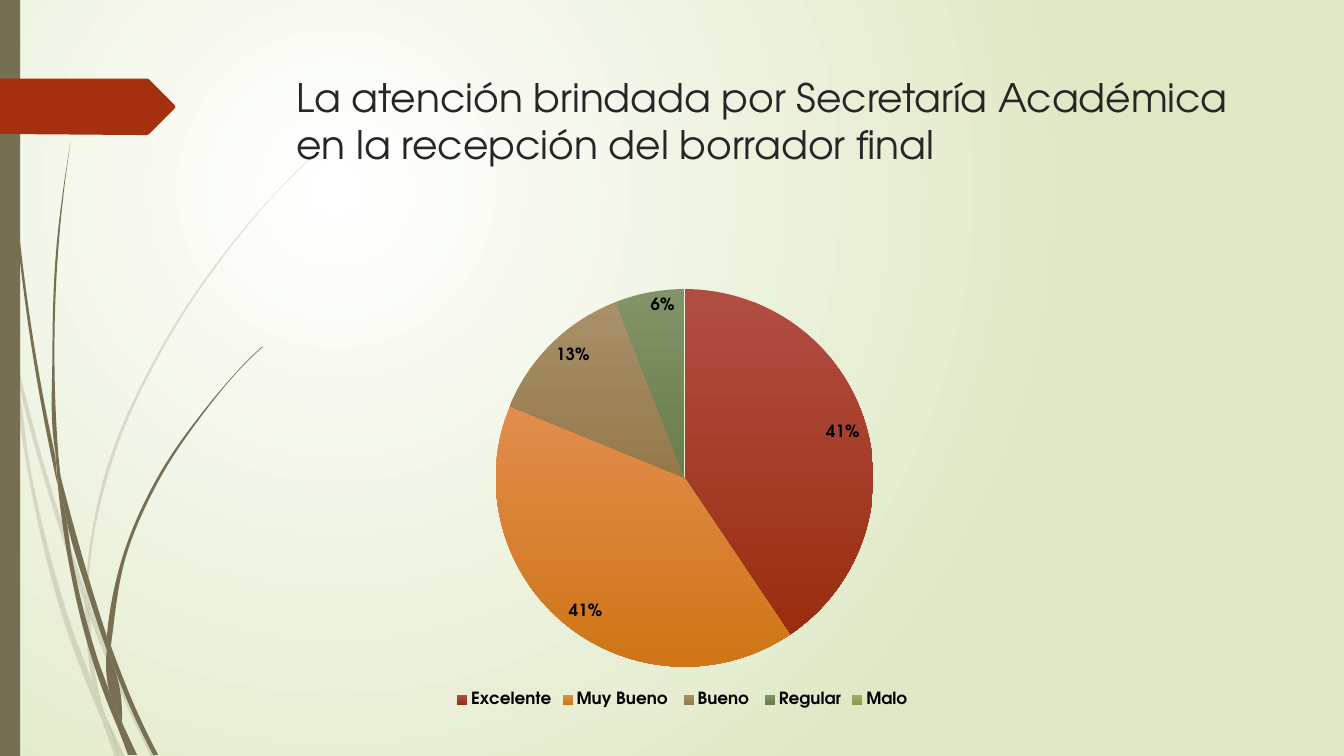
import math

import lxml.etree
import pptx
import pptx.chart.data
import pptx.dml.color
import pptx.enum.chart
import pptx.enum.shapes
import pptx.enum.text
import pptx.oxml.ns
import pptx.util

WIDTH, HEIGHT = pptx.util.Inches(13.33), pptx.util.Inches(7.5)
UNIT = pptx.util.Inches(0.01)
FONT = "TeX Gyre Adventor"
OLIVE, RUST, INK = "766F54", "A53010", "262626"

PALE_BLADES = [
    ([(0, 282), (9, 322), (11, 350)], [(10, 344), (0, 299)]),
    ([(14, 345), (62, 520), (85, 586)], [(84, 599), (58, 522), (17, 376)]),
    ([(88, 596), (92, 607), (127, 692), (155, 751)],
     [(150, 751), (123, 694), (88, 610)]),
    ([(105, 711), (124, 751)], [(119, 751), (105, 711)]),
    ([(11, 350), (28, 470), (65, 621), (92, 693), (101, 714)],
     [(99, 707), (93, 683), (70, 619), (31, 469), (17, 376), (11, 350)]),
    ([(84, 599), (87, 646), (93, 683), (96, 692), (105, 711)],
     [(103, 706), (91, 646), (88, 608), (84, 599)]),
    ([(312, 153), (289, 175), (268, 197), (228, 244), (158, 348), (107, 461), (85, 584)],
     [(88, 596), (88, 584), (110, 462), (160, 349), (229, 245), (268, 198), (290, 175), (312, 154)]),
    ([(101, 714), (114, 751)], [(119, 751), (101, 714)]),
    ([(85, 586), (88, 596), (88, 610)], [(84, 599), (85, 586)]),
    ([(93, 683), (96, 692), (105, 711), (119, 751)], [(101, 714), (93, 683)]),
]
DARK_BLADES = [
    ([(3, 0), (4, 48), (7, 110), (17, 233), (33, 355), (57, 481)],
     [(55, 453), (36, 355), (19, 232), (8, 109), (5, 48), (4, 0)]),
    ([(60, 472), (93, 590), (106, 631)], [(106, 645), (88, 592), (64, 505), (60, 472)]),
    ([(110, 641), (113, 649), (136, 706), (157, 749)],
     [(152, 749), (132, 708), (111, 656)]),
    ([(57, 477), (68, 557), (93, 659), (111, 708), (117, 722)],
     [(116, 717), (110, 691), (98, 657), (72, 556), (64, 505), (57, 477)]),
    ([(70, 141), (62, 193), (56, 245), (52, 349), (55, 449), (60, 472)],
     [(58, 453), (54, 349), (58, 245), (63, 193), (70, 141)]),
    ([(122, 719), (136, 749)], [(133, 749), (122, 719)]),
    ([(55, 449), (60, 472), (64, 505)], [(57, 477), (55, 449)]),
    ([(260, 344), (245, 358), (231, 373), (204, 405), (156, 474), (122, 551), (106, 631)],
     [(110, 641), (111, 633), (125, 552), (158, 476), (205, 406), (231, 374), (245, 359), (261, 344)]),
    ([(117, 722), (127, 749)], [(131, 749), (117, 722)]),
    ([(106, 645), (110, 691), (116, 706), (122, 719)],
     [(121, 716), (111, 656), (106, 645)]),
    ([(106, 631), (110, 641), (111, 656)], [(106, 645), (106, 631)]),
    ([(110, 691), (116, 706), (122, 719), (133, 749)], [(130, 749), (117, 722), (110, 691)]),
]
RIBBON = [(0, 78), (146, 78), (148, 79), (173, 104), (174, 106),
          (173, 108), (148, 133), (146, 134), (136, 134), (0, 133)]
TITLE = "La atención brindada por Secretaría Académica en la recepción del borrador final"
RATINGS = [
    ("Excelente", 41, ("B14E43", "9A2D0F")),
    ("Muy Bueno ", 41, ("E18D4C", "CF7516")),
    ("Bueno ", 13, ("A89068", "947A4B")),
    ("Regular", 6, ("819367", "6A7D4D")),
    ("Malo ", 0, ("9DB265", "889E47")),
]


def color(code):
    """Turn a hex string into a colour."""
    return pptx.dml.color.RGBColor.from_string(code)


def apply(target, values):
    """Set attributes from a dict of format values."""
    for name, value in values.items():
        setattr(target, name, value)


def add_element(parent, tag, **values):
    """Append an XML element with its attributes."""
    texts = {name: str(value) for name, value in values.items()}
    return lxml.etree.SubElement(parent, pptx.oxml.ns.qn(tag), texts)


def style_font(font, size, code, bold=False):
    """Give a font its face, size, weight and colour."""
    apply(font, {"name": FONT, "size": pptx.util.Pt(size), "bold": bold})
    font.color.rgb = color(code)


def fill_gradient(fill, codes):
    """Fill with a two-stop gradient."""
    fill.gradient()
    for stop, code in zip(fill.gradient_stops, codes):
        stop.color.rgb = color(code)


def finish(shape, code):
    """Give a shape a plain fill without line or shadow."""
    shape.shadow.inherit = False
    shape.fill.solid()
    shape.fill.fore_color.rgb = color(code)
    shape.line.fill.background()


def paint_background(slide):
    """Paint the radial glow behind the slide."""
    fill_gradient(slide.background.fill, ("FFFFFF", "DFE8C4"))
    gradient = slide.element.xpath(".//a:gradFill")[0]
    gradient.remove(gradient.xpath("./a:lin")[0])
    glow = add_element(gradient, "a:path", path="circle")
    add_element(glow, "a:fillToRect", l=50000, t=50000, r=100000, b=100000)


def bend(edge):
    """Return the two Bézier handles of every segment of an edge."""
    pairs = list(zip(edge, edge[1:]))
    if not pairs:
        return []
    spans = [math.dist(*pair) for pair in pairs]
    units = [[(b - a) / span for a, b in zip(*pair)] for pair, span in zip(pairs, spans)]
    slopes = [[(u * after + v * before) / (before + after) for u, v in zip(one, two)]
              for one, two, before, after in zip(units, units[1:], spans, spans[1:])]
    first = [2 * u - s for u, s in zip(units[0], (slopes or units)[0])]
    last = [2 * u - s for u, s in zip(units[-1], (slopes or units)[-1])]
    slopes = [first, *slopes, last]
    return [([p + s * span / 3 for p, s in zip(start, leave)],
             [p - s * span / 3 for p, s in zip(end, arrive)])
            for (start, end), span, leave, arrive in zip(pairs, spans, slopes, slopes[1:])]


def add_outline(slide, points, code):
    """Draw a filled outline given in grid units."""
    corners = [(x * UNIT, y * UNIT) for x, y in points]
    builder = slide.shapes.build_freeform(*corners[0])
    builder.add_line_segments(corners[1:], close=True)
    shape = builder.convert_to_shape()
    finish(shape, code)
    return shape


def add_blade(slide, down, back, opacity):
    """Draw a grass blade between two curved edges."""
    joined = down[-1] == back[0]
    shape = add_outline(slide, down + back[joined:], OLIVE)
    handles = bend(down) + [None] * (not joined) + bend(back)
    for line, pair in zip(shape.element.xpath(".//a:lnTo"), handles):
        if pair:
            curve = lxml.etree.Element(pptx.oxml.ns.qn("a:cubicBezTo"))
            for x, y in pair:
                add_element(curve, "a:pt", x=round(x * UNIT - shape.left),
                            y=round(y * UNIT - shape.top))
            curve.append(line[0])
            line.getparent().replace(line, curve)
    if opacity < 100:
        tint = shape.element.xpath("./p:spPr/a:solidFill/a:srgbClr")[0]
        add_element(tint, "a:alpha", val=opacity * 1000)


def add_title(slide):
    """Write the heading."""
    box = slide.shapes.add_textbox(284 * UNIT, 68 * UNIT, 975 * UNIT, 140 * UNIT)
    apply(box.text_frame, {"word_wrap": True,
                           "vertical_anchor": pptx.enum.text.MSO_ANCHOR.TOP})
    span = box.text_frame.paragraphs[0].add_run()
    span.text = TITLE
    style_font(span.font, 28, INK)


def add_pie(slide):
    """Chart the share of each rating."""
    data = pptx.chart.data.CategoryChartData()
    data.categories = [name for name, _, _ in RATINGS]
    data.add_series("Series 1", [value for _, value, _ in RATINGS])
    chart = slide.shapes.add_chart(pptx.enum.chart.XL_CHART_TYPE.PIE, 305 * UNIT, 273 * UNIT,
                                   748 * UNIT, 433 * UNIT, data).chart
    apply(chart, {"has_title": False, "has_legend": True})
    style_font(chart.font, 10, "000000", True)
    apply(chart.legend, {"position": pptx.enum.chart.XL_LEGEND_POSITION.BOTTOM,
                         "include_in_layout": False})
    style_font(chart.legend.font, 12, "000000", True)
    chart.plots[0].vary_by_categories = True
    series = chart.plots[0].series[0]
    labels = series.data_labels
    apply(labels, {"show_percentage": True, "show_value": False,
                   "number_format": "0%", "number_format_is_linked": False,
                   "position": pptx.enum.chart.XL_LABEL_POSITION.INSIDE_END})
    style_font(labels.font, 12, "000000", True)
    for index, (_, value, codes) in enumerate(RATINGS):
        look = series.points[index].format
        fill_gradient(look.fill, codes)
        look.fill.gradient_angle = 270
        look.line.fill.background()
        if not value:
            hide_label(series, index)


def hide_label(series, index):
    """Remove the label of an empty slice."""
    label = lxml.etree.Element(pptx.oxml.ns.qn("c:dLbl"))
    add_element(label, "c:idx", val=index)
    add_element(label, "c:delete", val=1)
    series._element.xpath("./c:dLbls")[0].insert(0, label)


def main():
    """Build the slide and save it."""
    deck = pptx.Presentation()
    apply(deck, {"slide_width": WIDTH, "slide_height": HEIGHT})
    slide = deck.slides.add_slide(deck.slide_layouts[6])
    paint_background(slide)
    for blades, opacity in ((PALE_BLADES, 20), (DARK_BLADES, 100)):
        for down, back in blades:
            add_blade(slide, down, back, opacity)
    band = slide.shapes.add_shape(pptx.enum.shapes.MSO_SHAPE.RECTANGLE, 0, 0, 20 * UNIT, HEIGHT)
    finish(band, OLIVE)
    add_outline(slide, RIBBON, RUST)
    add_title(slide)
    add_pie(slide)
    deck.save("out.pptx")


if __name__ == "__main__":
    main()
